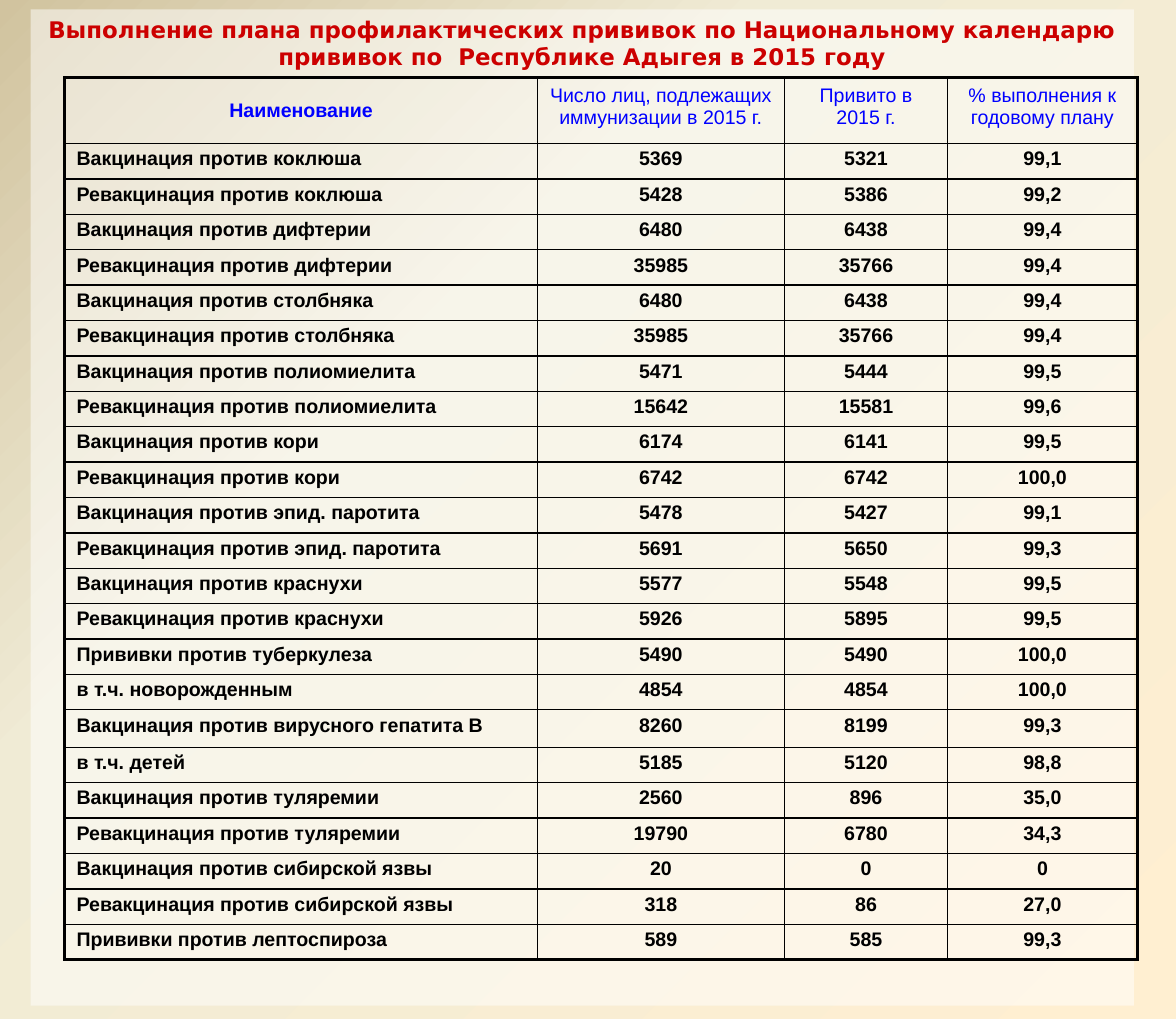
from copy import deepcopy

from lxml import etree
from pptx import Presentation
from pptx.dml.color import RGBColor
from pptx.enum.text import MSO_ANCHOR, MSO_AUTO_SIZE, PP_ALIGN
from pptx.oxml.ns import qn
from pptx.util import Cm, Pt

LEFT, CENTER = PP_ALIGN.LEFT, PP_ALIGN.CENTER
TOP, MIDDLE = MSO_ANCHOR.TOP, MSO_ANCHOR.MIDDLE
NO_AUTOFIT = MSO_AUTO_SIZE.NONE

BLACK = RGBColor(0x00, 0x00, 0x00)
WHITE = RGBColor(0xFF, 0xFF, 0xFF)
BLUE = RGBColor(0x00, 0x00, 0xFF)
RED = RGBColor(0xCC, 0x00, 0x00)
BACKGROUND = [
    (0, RGBColor(0xFF, 0xEF, 0xD1)),
    (0.65, RGBColor(0xF0, 0xEB, 0xD5)),
    (1, RGBColor(0xD1, 0xC3, 0x9F)),
]
THIN, THICK = Pt(1), Pt(2.25)

HEADER = ("Наименование", "Число лиц, подлежащих иммунизации в 2015 г.",
          "Привито в 2015 г.", "% выполнения к годовому плану")
ROWS = [
    ("Вакцинация против коклюша", "5369", "5321", "99,1"),
    ("Ревакцинация против коклюша", "5428", "5386", "99,2"),
    ("Вакцинация против дифтерии", "6480", "6438", "99,4"),
    ("Ревакцинация против дифтерии", "35985", "35766", "99,4"),
    ("Вакцинация против столбняка", "6480", "6438", "99,4"),
    ("Ревакцинация против столбняка", "35985", "35766", "99,4"),
    ("Вакцинация против полиомиелита", "5471", "5444", "99,5"),
    ("Ревакцинация против полиомиелита", "15642", "15581", "99,6"),
    ("Вакцинация против кори", "6174", "6141", "99,5"),
    ("Ревакцинация против кори", "6742", "6742", "100,0"),
    ("Вакцинация против эпид. паротита", "5478", "5427", "99,1"),
    ("Ревакцинация против эпид. паротита", "5691", "5650", "99,3"),
    ("Вакцинация против краснухи", "5577", "5548", "99,5"),
    ("Ревакцинация против краснухи", "5926", "5895", "99,5"),
    ("Прививки против туберкулеза", "5490", "5490", "100,0"),
    ("в т.ч. новорожденным", "4854", "4854", "100,0"),
    ("Вакцинация против вирусного гепатита В", "8260", "8199", "99,3"),
    ("в т.ч. детей", "5185", "5120", "98,8"),
    ("Вакцинация против туляремии", "2560", "896", "35,0"),
    ("Ревакцинация против туляремии", "19790", "6780", "34,3"),
    ("Вакцинация против сибирской язвы", "20", "0", "0"),
    ("Ревакцинация против сибирской язвы", "318", "86", "27,0"),
    ("Прививки против лептоспироза", "589", "585", "99,3"),
]
HEPATITIS_ROW = 17
COL_WIDTHS = (10.21, 5.33, 3.53, 4.09)
TABLE_HEIGHT, HEADER_HEIGHT, HEPATITIS_HEIGHT = 19.05, 1.42, 0.81


def set_border(cell, side, width):
    ln = etree.SubElement(cell._tc.get_or_add_tcPr(), qn(f"a:ln{side}"), w=str(width))
    fill = etree.SubElement(ln, qn("a:solidFill"))
    etree.SubElement(fill, qn("a:srgbClr"), val=str(BLACK))


prs = Presentation()
prs.slide_width, prs.slide_height = Cm(25.4), Cm(22)
s = prs.slides.add_slide(prs.slide_layouts[5])

# Background gradient
fill = s.background.fill
fill.gradient()
fill.gradient_angle = 135
gs_list = next(s._element.iter(qn("a:gsLst")))
gs_list.append(deepcopy(gs_list[0]))
for stop, (position, color) in zip(fill.gradient_stops, BACKGROUND):
    stop.position = position
    stop.color.rgb = color

# Title on a half-transparent white panel
sp = s.shapes.title
sp.left, sp.top, sp.width, sp.height = Cm(0.66), Cm(0.2), Cm(23.83), Cm(21.51)
sp.fill.solid()
sp.fill.fore_color.rgb = WHITE
white = next(sp._element.spPr.iter(qn("a:srgbClr")))
etree.SubElement(white, qn("a:alpha"), val="50000")
tf = sp.text_frame
tf.auto_size = NO_AUTOFIT
tf.vertical_anchor = TOP
p = tf.paragraphs[0]
p.text = ("Выполнение плана профилактических прививок по Национальному календарю "
          "прививок по  Республике Адыгея в 2015 году")
p.alignment = CENTER
p.font.name, p.font.size, p.font.bold = "DejaVu Sans", Pt(14), True
p.font.color.rgb = RED

# Table grid
last_row, last_col = len(ROWS), len(HEADER) - 1
table = s.shapes.add_table(last_row + 1, last_col + 1, Cm(1.4), Cm(1.68),
                           Cm(sum(COL_WIDTHS)), Cm(TABLE_HEIGHT)).table
table.first_row = table.horz_banding = False
for column, width in zip(table.columns, COL_WIDTHS):
    column.width = Cm(width)
row_height = (TABLE_HEIGHT - HEADER_HEIGHT - HEPATITIS_HEIGHT) / (last_row - 1)
for row in table.rows:
    row.height = Cm(row_height)
table.rows[0].height = Cm(HEADER_HEIGHT)
table.rows[HEPATITIS_ROW].height = Cm(HEPATITIS_HEIGHT)

# Table cells
for i, values in enumerate([HEADER] + ROWS):
    for j, value in enumerate(values):
        cell = table.cell(i, j)
        cell.margin_top = cell.margin_bottom = Cm(0.14)
        cell.vertical_anchor = MIDDLE if i == j == 0 else TOP
        for side, outer in (("L", j == 0), ("R", j == last_col),
                            ("T", i == 0), ("B", i == last_row)):
            set_border(cell, side, THICK if outer else THIN)
        cell.fill.background()
        p = cell.text_frame.paragraphs[0]
        p.text = value
        p.alignment = LEFT if i and j == 0 else CENTER
        p.line_spacing = 0.9 if i else 1.0
        p.font.name, p.font.size = "Arial", Pt(12)
        p.font.bold = i > 0 or j == 0
        p.font.color.rgb = BLACK if i else BLUE

prs.save("out.pptx")
